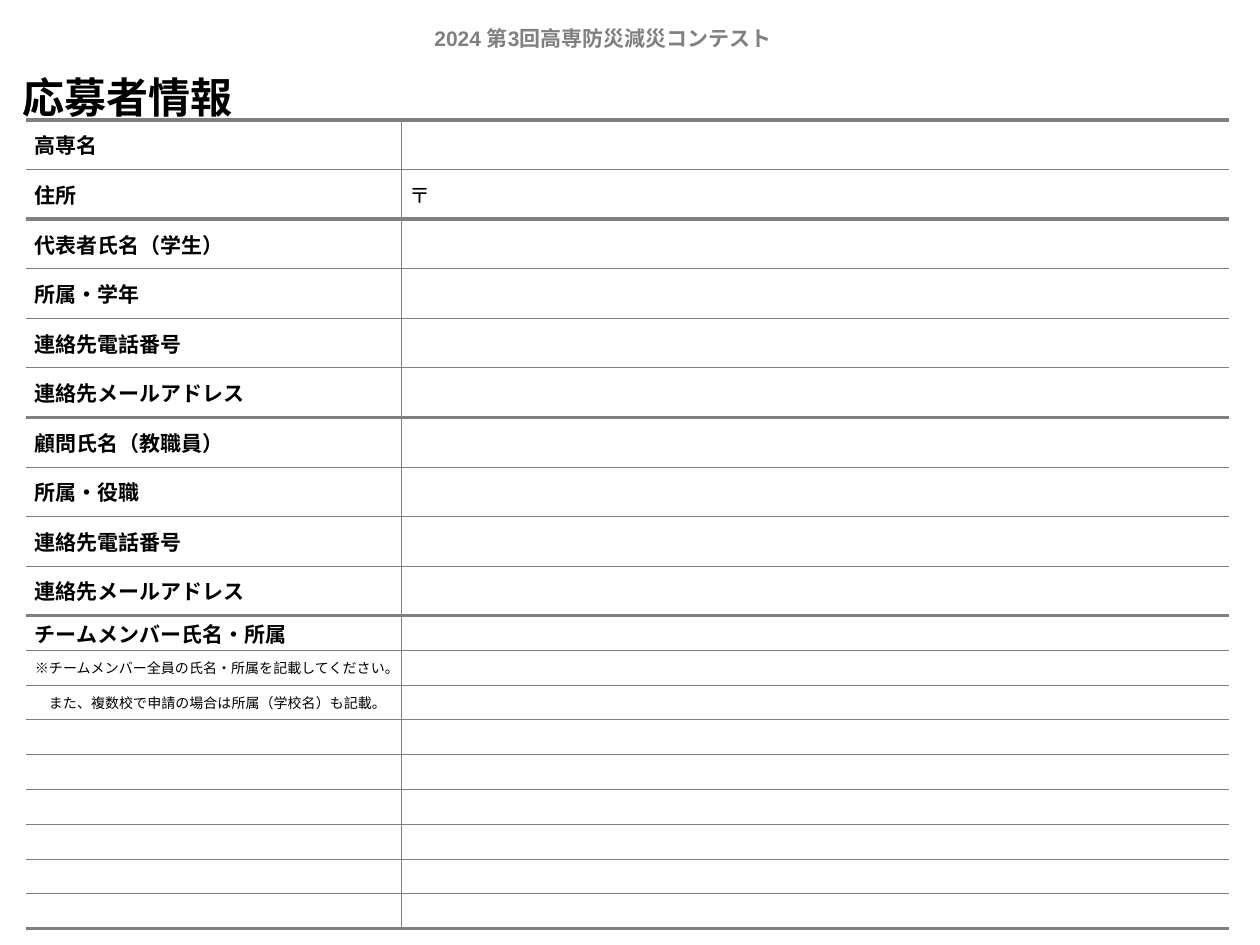
import dataclasses

import lxml.etree
import pptx
import pptx.dml.color
import pptx.enum.text
import pptx.oxml.ns
import pptx.util

PX = 914400 / 126


@dataclasses.dataclass(frozen=True)
class Theme:
    black: str = "000000"
    gray: str = "808080"
    white: str = "FFFFFF"
    latin: str = "Arial"
    school: str = "Calibri"
    japanese: str = "Noto Sans CJK JP"
    title: int = 24
    body: int = 12
    note: int = 8
    thin: float = 0.5
    thick: float = 2.25


THEME = Theme()
GROUPS = [
    ["高専名", "住所"],
    ["代表者氏名（学生）", "所属・学年", "連絡先電話番号", "連絡先メールアドレス"],
    ["顧問氏名（教職員）", "所属・役職", "連絡先電話番号", "連絡先メールアドレス"],
]
MEMBER_HEADING = "チームメンバー氏名・所属"
MEMBER_NOTES = [
    "※チームメンバー全員の氏名・所属を記載してください。",
    "また、複数校で申請の場合は所属（学校名）も記載。",
]
MEMBER_ROWS = 9


def px(value):
    return round(value * PX)


def rgb(color):
    return pptx.dml.color.RGBColor.from_string(color)


def add_child(parent, tag, **attributes):
    return lxml.etree.SubElement(parent, pptx.oxml.ns.qn(tag), attributes)


def add_run(paragraph, text, size, font=THEME.japanese, color=THEME.black, bold=True):
    run = paragraph.add_run()
    run.text = text
    run.font.size = pptx.util.Pt(size)
    run.font.bold = bold
    run.font.color.rgb = rgb(color)
    run.font.name = font
    add_child(run.font._element, "a:ea", typeface=THEME.japanese)


def add_header(slide, left, top, width, height):
    frame = slide.shapes.add_textbox(px(left), px(top), px(width), px(height)).text_frame
    frame.word_wrap = True
    add_run(frame.paragraphs[0], "2024 第3回高専防災減災コンテスト", THEME.body,
            THEME.latin, THEME.gray)


def place_title(slide, left, top, width, height):
    title = slide.shapes.title
    title.left, title.top, title.width, title.height = map(px, (left, top, width, height))
    frame = title.text_frame
    frame.auto_size = pptx.enum.text.MSO_AUTO_SIZE.NONE
    frame.vertical_anchor = pptx.enum.text.MSO_ANCHOR.MIDDLE
    frame.margin_left = frame.margin_right = px(9)
    frame.margin_top = frame.margin_bottom = px(5)
    paragraph = frame.paragraphs[0]
    paragraph.alignment = pptx.enum.text.PP_ALIGN.LEFT
    add_run(paragraph, "応募者情報", THEME.title)


def add_border(cell, side, width):
    """Draw one cell side; a width of None leaves it open."""
    properties = cell._tc.get_or_add_tcPr()
    if width is None:
        add_child(add_child(properties, f"a:ln{side}", w="0"), "a:noFill")
        return
    line = add_child(properties, f"a:ln{side}", w=str(pptx.util.Pt(width)))
    add_child(add_child(line, "a:solidFill"), "a:srgbClr", val=THEME.gray)


def format_cell(cell, column, top_width, bottom_width):
    cell.margin_left = cell.margin_right = px(9)
    cell.margin_top = cell.margin_bottom = px(5)
    cell.vertical_anchor = pptx.enum.text.MSO_ANCHOR.MIDDLE
    add_border(cell, "L", THEME.thin if column else None)
    add_border(cell, "R", None if column else THEME.thin)
    add_border(cell, "T", top_width)
    add_border(cell, "B", bottom_width)
    cell.fill.solid()
    cell.fill.fore_color.rgb = rgb(THEME.white)


def fill_labels(table):
    labels = [label for group in GROUPS for label in group] + [MEMBER_HEADING]
    for row, label in enumerate(labels):
        font = THEME.school if row < len(GROUPS[0]) else THEME.japanese
        add_run(table.cell(row, 0).text_frame.paragraphs[0], label, THEME.body, font)
    heading = table.cell(len(labels) - 1, 0)
    heading.margin_top = heading.margin_bottom = 0

    for row, note in enumerate(MEMBER_NOTES, len(labels)):
        paragraph = table.cell(row, 0).text_frame.paragraphs[0]
        add_run(paragraph, note, THEME.note, bold=False)
    # The second note lines up behind the mark that opens the first.
    paragraph._p.get_or_add_pPr().set("marL", str(pptx.util.Pt(THEME.note)))

    add_run(table.cell(1, 1).text_frame.paragraphs[0], "〒", THEME.body,
            THEME.school, bold=False)


def add_form(slide, left, top, label_width, entry_width, details_height, members_height):
    detail_rows = sum(map(len, GROUPS))
    row_count = detail_rows + MEMBER_ROWS
    table = slide.shapes.add_table(
        row_count, 2, px(left), px(top), px(label_width + entry_width),
        px(details_height + members_height)).table
    table.first_row = table.horz_banding = False
    table.columns[0].width = px(label_width)
    table.columns[1].width = px(entry_width)

    thick_edges = {sum(map(len, GROUPS[:count])) for count in range(len(GROUPS) + 1)}
    thick_edges.add(row_count)
    edges = [THEME.thick if edge in thick_edges else THEME.thin
             for edge in range(row_count + 1)]
    for index, row in enumerate(table.rows):
        row.height = px(details_height / detail_rows if index < detail_rows
                        else members_height / MEMBER_ROWS)
        for column, cell in enumerate(row.cells):
            format_cell(cell, column, edges[index], edges[index + 1])
    fill_labels(table)

    for cell in table.iter_cells():
        if not cell.text_frame.text:
            add_child(cell.text_frame.paragraphs[0]._p, "a:endParaRPr",
                      sz=str(THEME.note * 100))


def main():
    presentation = pptx.Presentation()
    presentation.slide_width = px(1260)
    presentation.slide_height = px(945)
    slide = presentation.slides.add_slide(presentation.slide_layouts[5])
    add_header(slide, left=422, top=19, width=400, height=38)
    place_title(slide, left=14, top=67, width=1260, height=60)
    add_form(slide, left=26, top=120, label_width=375, entry_width=828,
             details_height=496, members_height=313)
    presentation.save("out.pptx")


if __name__ == "__main__":
    main()
